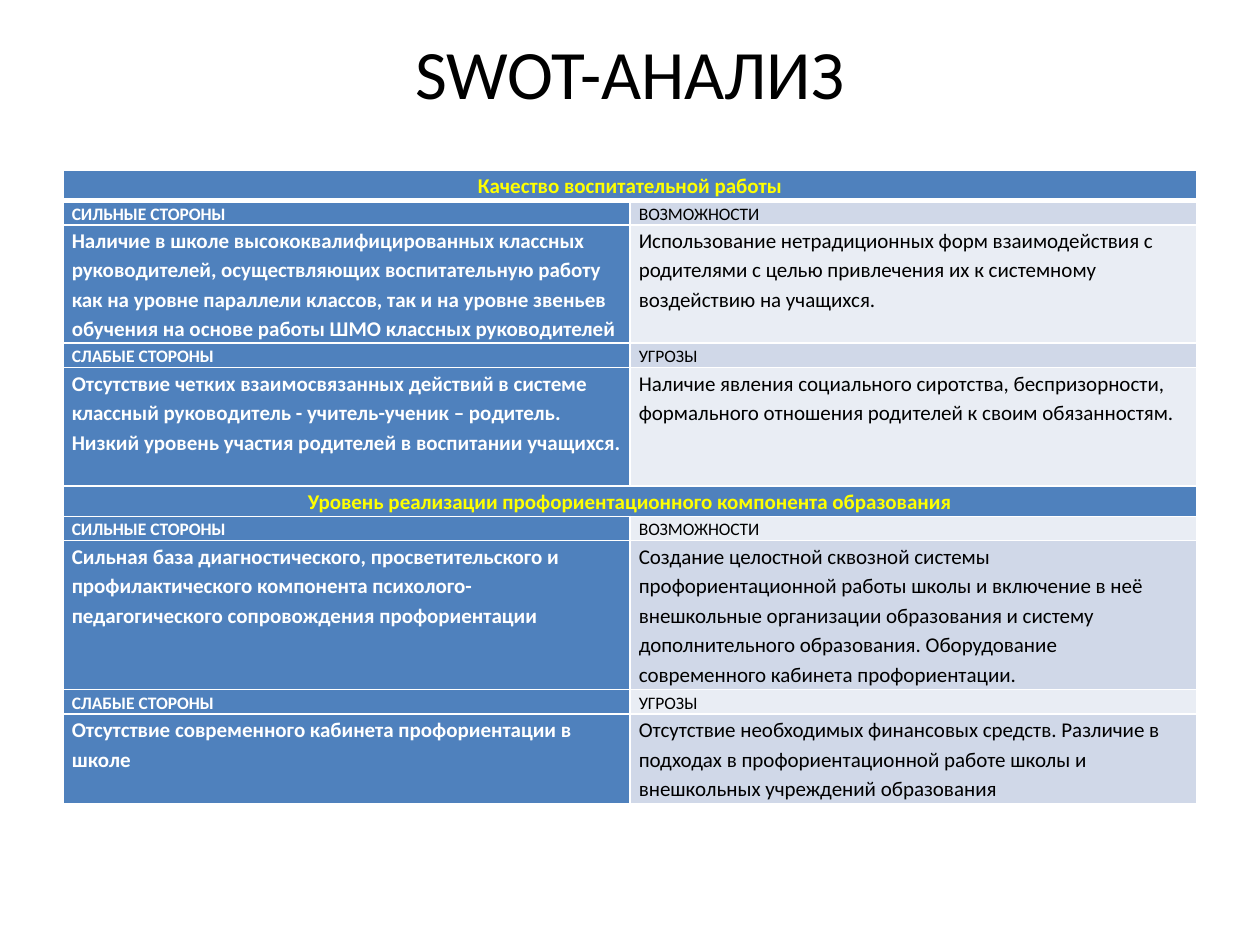
from lxml import etree
from pptx import Presentation
from pptx import util as u
from pptx.dml.color import RGBColor
from pptx.enum import text
from pptx.oxml.ns import qn

BLUE = RGBColor(0x4F, 0x81, 0xBD)
MIDDLE_BAND = RGBColor(0xD0, 0xD8, 0xE8)
LIGHT_BAND = RGBColor(0xE9, 0xED, 0xF4)
YELLOW = RGBColor(0xFF, 0xFF, 0x00)
WHITE = RGBColor(0xFF, 0xFF, 0xFF)
BLACK = RGBColor(0x00, 0x00, 0x00)
FONT = "Calibri"

TITLE = "SWOT-АНАЛИЗ"
STRENGTHS = ("СИЛЬНЫЕ СТОРОНЫ", "ВОЗМОЖНОСТИ")
WEAKNESSES = ("СЛАБЫЕ СТОРОНЫ", "УГРОЗЫ")
SECTIONS = [
    {
        "heading": "Качество воспитательной работы",
        "blocks": [
            (STRENGTHS, 0.94, (
                ["Наличие в школе высококвалифицированных классных руководителей, "
                 "осуществляющих воспитательную работу как на уровне параллели классов, "
                 "так и на уровне звеньев обучения на основе работы ШМО классных руководителей"],
                ["Использование нетрадиционных форм взаимодействия с родителями "
                 "с целью привлечения их к системному воздействию на учащихся."])),
            (WEAKNESSES, 0.94, (
                ["Отсутствие четких взаимосвязанных действий в системе "
                 "классный руководитель - учитель-ученик – родитель.",
                 "Низкий уровень участия родителей в воспитании учащихся."],
                ["Наличие явления социального сиротства, беспризорности, "
                 "формального отношения родителей к своим обязанностям."])),
        ],
    },
    {
        "heading": "Уровень реализации профориентационного компонента образования",
        "blocks": [
            (STRENGTHS, 1.18, (
                ["Сильная база диагностического, просветительского и профилактического "
                 "компонента психолого-педагогического сопровождения профориентации"],
                ["Создание целостной сквозной системы профориентационной работы школы "
                 "и включение в неё внешкольные организации образования и систему "
                 "дополнительного образования. Оборудование современного кабинета "
                 "профориентации."])),
            (WEAKNESSES, 0.71, (
                ["Отсутствие современного кабинета профориентации в школе"],
                ["Отсутствие необходимых финансовых средств. Различие в подходах "
                 "в профориентационной работе школы и внешкольных учреждений образования"])),
        ],
    },
]


def list_rows():
    rows = []
    for section in SECTIONS:
        rows.append((0.24, 12, [[section["heading"]]]))
        for labels, height, contents in section["blocks"]:
            rows.append((0.18, 10, [[label] for label in labels]))
            rows.append((height, 12, contents))
    return rows


def add_run(paragraph, wording, size, color, bold):
    run = paragraph.add_run()
    run.text = wording
    run.font.name = FONT
    run.font.size = u.Pt(size)
    run.font.bold = bold
    run.font.color.rgb = color


def set_borders(cell, row_index):
    properties = cell._tc.get_or_add_tcPr()
    widths = {
        "lnL": 1,
        "lnR": 1,
        "lnT": 3 if row_index == 1 else 1,
        "lnB": 3 if row_index == 0 else 1,
    }
    for side, width in widths.items():
        line = etree.SubElement(properties, qn(f"a:{side}"), w=str(u.Pt(width)))
        fill = etree.SubElement(line, qn("a:solidFill"))
        etree.SubElement(fill, qn("a:srgbClr"), val=str(WHITE))


def fill_cell(cell, paragraphs, size, color, bold, alignment):
    cell.margin_left = cell.margin_right = u.Inches(0.07)
    cell.margin_top = cell.margin_bottom = 0
    frame = cell.text_frame
    for index, wording in enumerate(paragraphs):
        paragraph = frame.add_paragraph() if index else frame.paragraphs[0]
        paragraph.alignment = alignment
        paragraph.line_spacing = 1.15
        add_run(paragraph, wording, size, color, bold)


def add_title(slide):
    title = slide.shapes.title
    title.left, title.top = u.Inches(0.5), u.Inches(0.3)
    title.width, title.height = u.Inches(9), u.Inches(0.54)
    frame = title.text_frame
    frame.auto_size = text.MSO_AUTO_SIZE.NONE
    frame.vertical_anchor = text.MSO_ANCHOR.MIDDLE
    paragraph = frame.paragraphs[0]
    paragraph.alignment = text.PP_ALIGN.CENTER
    add_run(paragraph, TITLE, 39.6, BLACK, False)


def add_swot_table(slide):
    rows = list_rows()
    total_height = sum(height for height, _, _ in rows)
    table = slide.shapes.add_table(
        len(rows), 2, u.Inches(0.5), u.Inches(1.35), u.Inches(9), u.Inches(total_height)
    ).table
    table.first_col = True
    for row_index, (height, size, contents) in enumerate(rows):
        table.rows[row_index].height = u.Inches(height)
        is_heading = len(contents) == 1
        band = MIDDLE_BAND if row_index % 2 else LIGHT_BAND
        for column in range(2):
            cell = table.cell(row_index, column)
            set_borders(cell, row_index)
            cell.fill.solid()
            cell.fill.fore_color.rgb = band if column and not is_heading else BLUE
        if is_heading:
            table.cell(row_index, 0).merge(table.cell(row_index, 1))
        for column, paragraphs in enumerate(contents):
            color = YELLOW if is_heading else (WHITE, BLACK)[column]
            alignment = text.PP_ALIGN.CENTER if is_heading else text.PP_ALIGN.LEFT
            fill_cell(table.cell(row_index, column), paragraphs, size, color,
                      column == 0, alignment)


def main():
    presentation = Presentation()
    presentation.slide_width = u.Inches(10)
    presentation.slide_height = u.Inches(7.5)
    slide = presentation.slides.add_slide(presentation.slide_layouts[5])
    add_title(slide)
    add_swot_table(slide)
    presentation.save("out.pptx")


if __name__ == "__main__":
    main()
